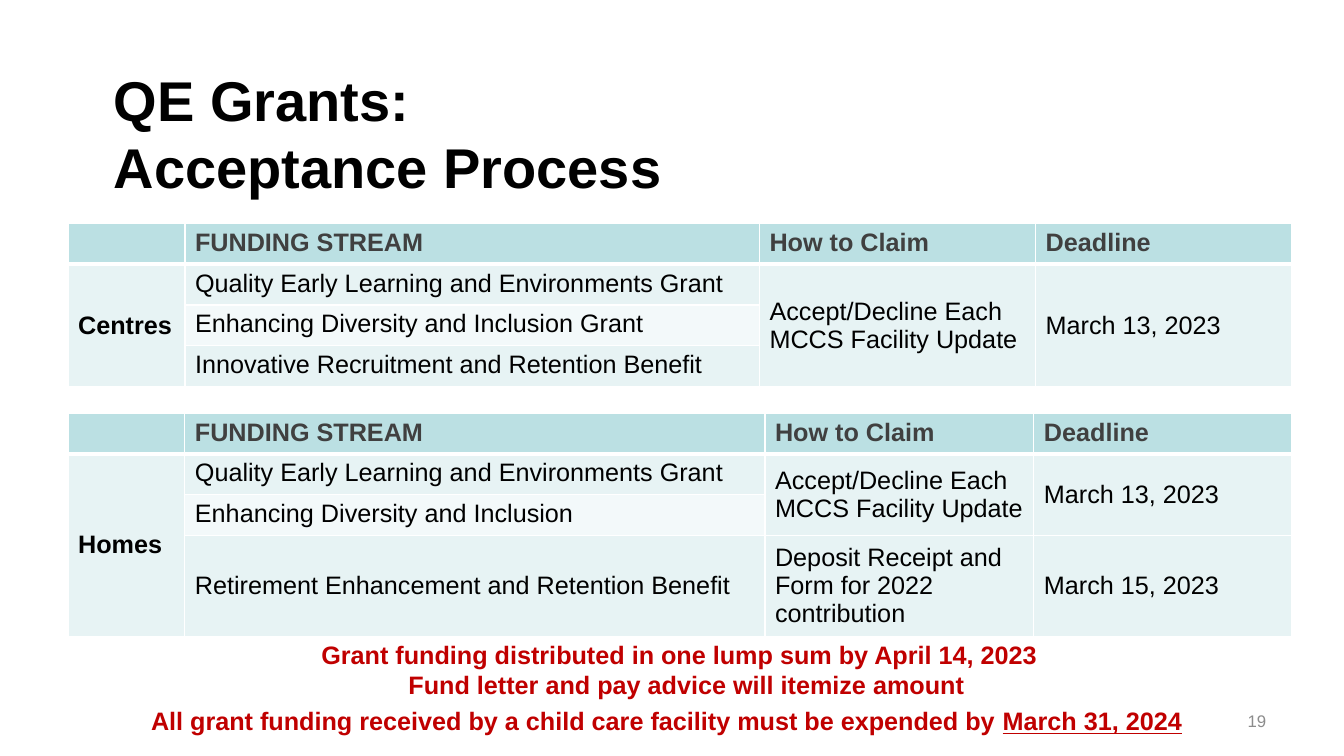
import pptx
import pptx.util
import pptx.dml.color
import pptx.enum.text
import pptx.oxml
import pptx.oxml.ns

COLORS = {
    "title": "000000", "body": "000000", "heading": "404040", "notice": "C00000",
    "number": "8C8C8C", "border": "FFFFFF", "header": "BBE0E3",
    "odd": "E7F3F4", "even": "F3F9FA",
}
FONT = "Arial"
GRID_COLUMNS = 160
SLIDE_WIDTH = pptx.util.Inches(13.33)
SLIDE_HEIGHT = pptx.util.Inches(7.5)
ROW = 4.86
TALL_ROW = 11.4
ALIGN = pptx.enum.text.PP_ALIGN
MIDDLE = pptx.enum.text.MSO_ANCHOR.MIDDLE
TOP = pptx.enum.text.MSO_ANCHOR.TOP

HEADINGS = ["", "FUNDING STREAM", "How to Claim", "Deadline"]
ACCEPT = "Accept/Decline Each MCCS Facility Update"
CENTRES = [
    HEADINGS,
    ["Centres", "Quality Early Learning and Environments Grant", ACCEPT, "March 13, 2023"],
    [None, "Enhancing Diversity and Inclusion Grant", None, None],
    [None, "Innovative Recruitment and Retention Benefit", None, None],
]
HOMES = [
    HEADINGS,
    ["Homes", "Quality Early Learning and Environments Grant", ACCEPT, "March 13, 2023"],
    [None, "Enhancing Diversity and Inclusion", None, None],
    [None, "Retirement Enhancement and Retention Benefit",
     "Deposit Receipt and Form for 2022 contribution", "March 15, 2023"],
]


def grid(units):
    """Convert grid columns to a slide length."""
    return round(units * SLIDE_WIDTH / GRID_COLUMNS)


def style(paragraph, size, color, bold=False):
    """Set the font of a whole paragraph."""
    font = paragraph.font
    font.name, font.size, font.bold = FONT, pptx.util.Pt(size), bold
    font.color.rgb = pptx.dml.color.RGBColor.from_string(COLORS[color])


def add_text(slide, box, lines, size, color, bold=True, align=ALIGN.LEFT, anchor=TOP, wrap=True):
    """Place lines of text in a box and return their paragraphs."""
    frame = slide.shapes.add_textbox(*map(grid, box)).text_frame
    frame.word_wrap = wrap
    frame.vertical_anchor = anchor
    for index, line in enumerate(lines):
        paragraph = frame.add_paragraph() if index else frame.paragraphs[0]
        paragraph.text = line
        paragraph.alignment = align
        style(paragraph, size, color, bold)
    return frame.paragraphs


def add_borders(cell, bottom):
    """Draw the four borders of a cell."""
    properties = cell._tc.get_or_add_tcPr()
    for side, width in (("L", 1), ("R", 1), ("T", 1), ("B", bottom)):
        properties.append(pptx.oxml.parse_xml(
            f'<a:ln{side} {pptx.oxml.ns.nsdecls("a")} w="{pptx.util.Pt(width)}"><a:solidFill>'
            f'<a:srgbClr val="{COLORS["border"]}"/></a:solidFill></a:ln{side}>'))


def fill_cell(cell, text, row, column, middle):
    """Give a cell its borders, fill and text."""
    header = row == 0
    add_borders(cell, 3 if header else 1)
    band = "header" if header else "even" if row == 2 and column == 1 else "odd"
    cell.fill.solid()
    cell.fill.fore_color.rgb = pptx.dml.color.RGBColor.from_string(COLORS[band])
    cell.vertical_anchor = MIDDLE if middle else TOP
    paragraph = cell.text_frame.paragraphs[0]
    paragraph.text = text or ""
    style(paragraph, 18, "heading" if header else "body", header or column == 0)


def add_grants(slide, box, content, shares, heights):
    """Build a grant table, where None continues the cell above."""
    left, top, width = box
    table = slide.shapes.add_table(
        len(content), len(shares), *map(grid, (left, top, width, sum(heights)))).table
    for column, share in zip(table.columns, shares):
        column.width = grid(width * share / sum(shares))
    for row, height in zip(table.rows, heights):
        row.height = grid(height)
    for row, texts in enumerate(content):
        for column, text in enumerate(texts):
            middle = row > 0 and (column != 1 or heights[row] > ROW)
            fill_cell(table.cell(row, column), text, row, column, middle)
    for column in range(len(shares)):
        starts = [row for row, texts in enumerate(content) if texts[column] is not None]
        for start, end in zip(starts, starts[1:] + [len(content)]):
            if end - start > 1:
                table.cell(start, column).merge(table.cell(end - 1, column))


def add_notices(slide, box):
    """Place the payment notices and the spending deadline."""
    left, top, width, height = box
    payment = add_text(
        slide, (left + 19.44, top, 89.28, 8.52),
        ["Grant funding distributed in one lump sum by April 14, 2023",
         "Fund letter and pay advice will itemize amount"],
        18, "notice", align=ALIGN.CENTER, wrap=False)
    payment[1]._p.get_or_add_pPr().set("marL", str(grid(1.68)))
    spending = add_text(
        slide, (left, top + height - 4.8, width, 4.8),
        ["All grant funding received by a child care facility must be expended by "], 18, "notice")
    deadline = spending[0].add_run()
    deadline.text = "March 31, 2024"
    deadline.font.underline = True


def build_slide(presentation):
    """Build the acceptance process slide."""
    slide = presentation.slides.add_slide(presentation.slide_layouts[6])
    add_text(slide, (115.92, 83.4, 36, 4.8), ["19"], 12, "number",
             bold=False, align=ALIGN.RIGHT, anchor=MIDDLE)
    add_text(slide, (12.36, 8.28, 140.4, 15), ["QE Grants:\vAcceptance Process"], 40, "title",
             anchor=MIDDLE)
    add_grants(slide, (8.1, 26.6, 145.68), CENTRES, (1.16, 5.7, 2.74, 2.54), [ROW] * 4)
    add_grants(slide, (8.1, 49.2, 145.68), HOMES, (1.16, 5.76, 2.67, 2.56), [ROW] * 3 + [TALL_ROW])
    add_notices(slide, (16.8, 75.48, 128.28, 12.72))


def main():
    """Create and save the presentation."""
    presentation = pptx.Presentation()
    presentation.slide_width = SLIDE_WIDTH
    presentation.slide_height = SLIDE_HEIGHT
    build_slide(presentation)
    presentation.save("out.pptx")


if __name__ == "__main__":
    main()
